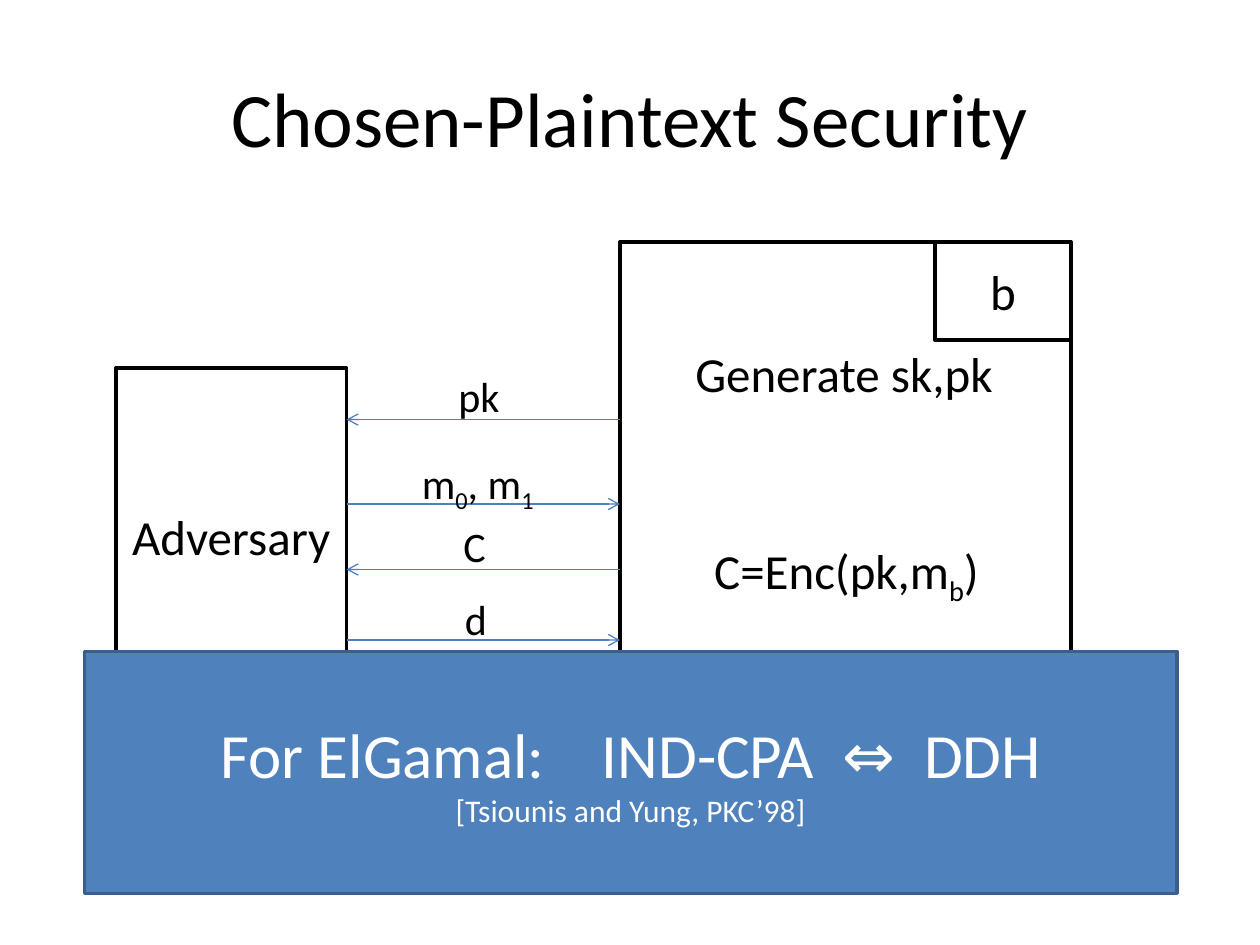
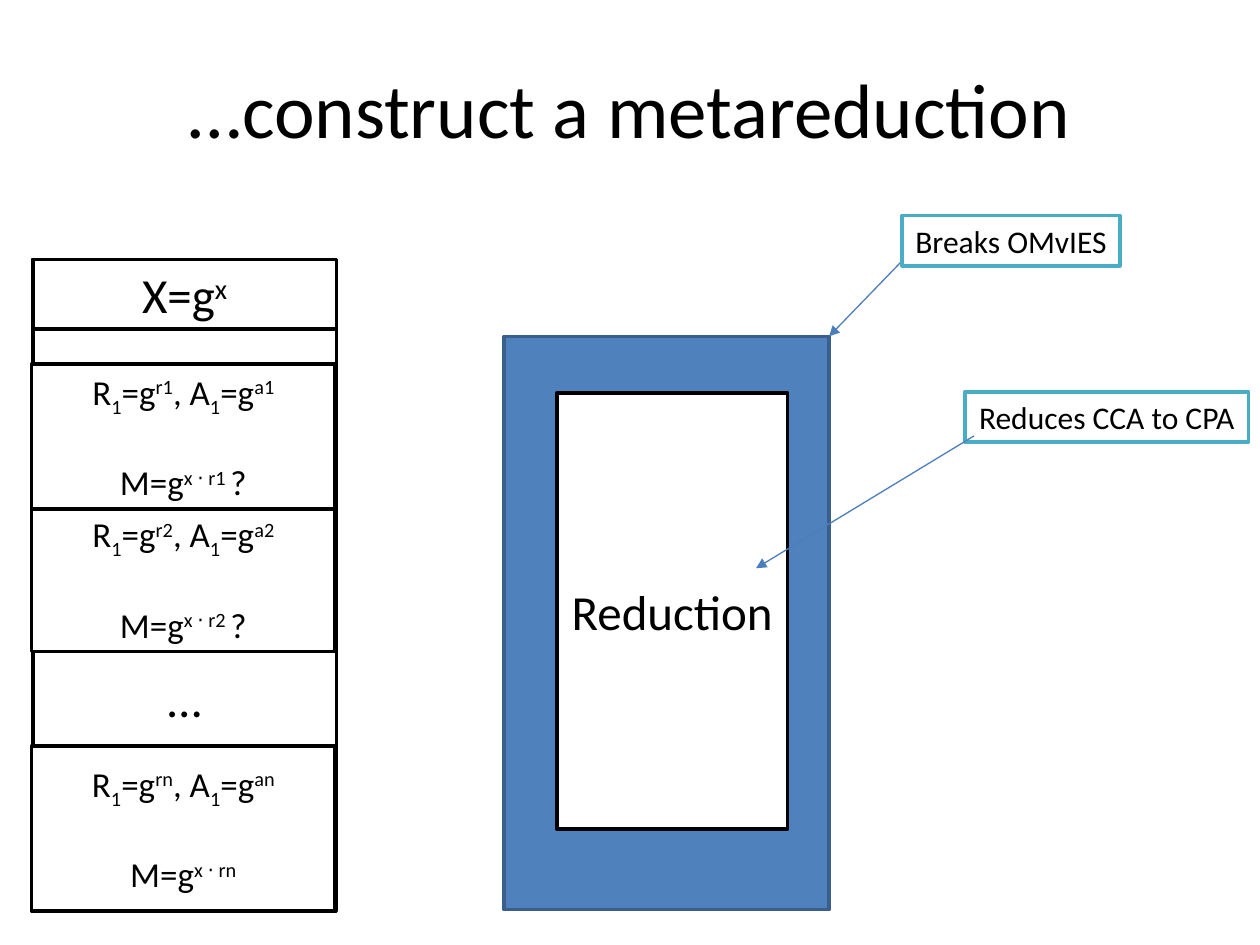
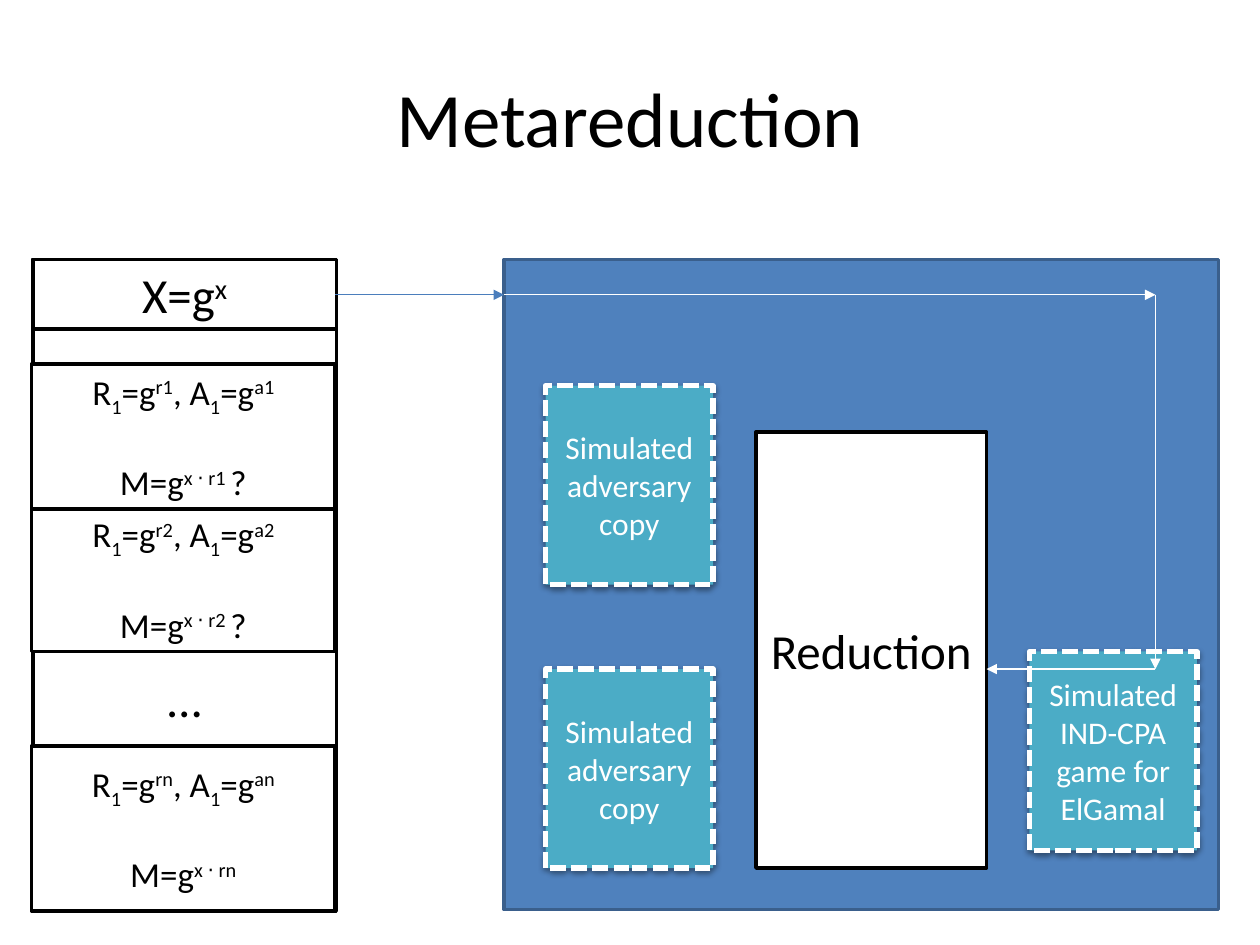
from lxml import etree
from pptx import Presentation
from pptx.dml.color import RGBColor
from pptx.enum.dml import MSO_LINE
from pptx.enum.shapes import MSO_CONNECTOR, MSO_SHAPE
from pptx.enum.text import MSO_ANCHOR, PP_ALIGN
from pptx.oxml.ns import qn
from pptx.util import Inches, Pt

RECT = MSO_SHAPE.RECTANGLE
STRAIGHT = MSO_CONNECTOR.STRAIGHT
DASH = MSO_LINE.SQUARE_DOT
LEFT, CENTER = PP_ALIGN.LEFT, PP_ALIGN.CENTER
TOP, MIDDLE = MSO_ANCHOR.TOP, MSO_ANCHOR.MIDDLE

FONT = "Calibri"
TITLE_ONLY = 5
SPACE_WIDTH = 0.226  # width of a space, in ems
COLORS = {
    "black": "000000",
    "white": "FFFFFF",
    "blue": "4F81BD",
    "edge": "3A5F8C",
    "arrow": "4B7EBC",
    "teal": "4BACC6",
}
BASELINES = {"_": "-25000", "^": "30000"}


def rgb(name):
    return RGBColor.from_string(COLORS[name])


def add_run(p, piece, size, color):
    """Add a piece: _ lowers it, ^ raises it, +n is a space widened by n spaces."""
    mark = piece[0]
    r = p.add_run()
    r.font.name, r.font.size = FONT, Pt(size)
    r.font.color.rgb = rgb(color)
    rpr = r.font._element
    if mark == "+":
        r.text = " "
        rpr.set("spc", str(round(int(piece[1:]) * SPACE_WIDTH * size * 100)))
    elif mark in BASELINES:
        r.text = piece[1:]
        rpr.set("baseline", BASELINES[mark])
    else:
        r.text = piece


def write(tf, *lines, size=28, color="black", align=CENTER, anchor=MIDDLE,
          wrap=True, gap=0, last_size=None):
    """Write one paragraph per line; | separates the pieces of a line."""
    tf.word_wrap = wrap
    tf.vertical_anchor = anchor
    for i, line in enumerate(lines):
        p = tf.add_paragraph() if i else tf.paragraphs[0]
        p.alignment = align
        if i:
            p.space_before = Pt(gap)
        line_size = last_size if i and last_size else size
        for piece in line.split("|"):
            add_run(p, piece, line_size, color)


def add_slide(prs, title, top=0.3):
    s = prs.slides.add_slide(prs.slide_layouts[TITLE_ONLY])
    sp = s.shapes.title
    sp.left, sp.top = Inches(0.5), Inches(top)
    sp.width, sp.height = Inches(9), Inches(1.25)
    write(sp.text_frame, title, size=44)
    return s


def add_box(s, x, y, w, h, *lines, fill="white", line="black", width=2, **fmt):
    sp = s.shapes.add_shape(RECT, Inches(x), Inches(y), Inches(w), Inches(h))
    sp.shadow.inherit = False
    sp.fill.solid()
    sp.fill.fore_color.rgb = rgb(fill)
    sp.line.color.rgb = rgb(line)
    sp.line.width = Pt(width)
    if lines:
        write(sp.text_frame, *lines, **fmt)
    return sp


def add_panel(s, x, y, w, h, *lines, **fmt):
    return add_box(s, x, y, w, h, *lines, fill="blue", line="edge",
                   color="white", **fmt)


def add_label(s, x, y, w, h, text, size=24):
    sp = s.shapes.add_textbox(Inches(x), Inches(y), Inches(w), Inches(h))
    write(sp.text_frame, text, size=size, align=LEFT, anchor=TOP)


def add_callout(s, x, y, w, text):
    add_box(s, x, y, w, 0.4, text, line="teal", size=18, wrap=False)


def add_arrow(s, x1, y1, x2, y2, color="arrow", head="triangle"):
    c = s.shapes.add_connector(STRAIGHT, Inches(x1), Inches(y1),
                               Inches(x2), Inches(y2))
    c.line.color.rgb = rgb(color)
    c.line.width = Pt(0.75)
    sp_pr = c._element.spPr
    etree.SubElement(sp_pr.find(qn("a:ln")), qn("a:tailEnd"), type=head)
    etree.SubElement(sp_pr, qn("a:effectLst"))


def add_simulation(s, x, y, text):
    """Add a dashed teal box with a soft shadow below it."""
    sp = add_box(s, x, y, 1.33, 1.58, text, fill="teal", line="white",
                 width=3, size=18, color="white")
    sp.line.dash_style = DASH
    effects = sp._element.spPr.find(qn("a:effectLst"))
    shadow = etree.SubElement(effects, qn("a:outerShdw"), blurRad="40000",
                              dist="20000", dir="5400000", rotWithShape="0")
    tint = etree.SubElement(shadow, qn("a:srgbClr"), val=COLORS["black"])
    etree.SubElement(tint, qn("a:alpha"), val="38000")


def add_reduction(s, x, y):
    add_box(s, x, y, 1.83, 3.46, "Reduction")


def add_challenge_column(s):
    x, w = 0.25, 2.41
    add_box(s, x + 0.01, 2.06, w, 5.17)
    add_box(s, x + 0.01, 5.16, w, 0.76, "…")
    add_box(s, x + 0.01, 2.06, w, 0.55, "X=g|^x")
    for index, y, h, ending in (("n", 5.92, 1.31, ""),
                                ("2", 4.02, 1.15, " |?"),
                                ("1", 2.89, 1.15, " |?")):
        add_box(s, x, y, w, h,
                f"R|_1|=g|^r{index}|, A|_1|=g|^a{index}",
                f"M=g|^x ⋅ r{index}{ending}", size=20, gap=24.4)


def build_security_game(prs):
    s = add_slide(prs, "Chosen-Plaintext Security")
    adversary_edge, game_edge = 2.75, 4.92
    add_box(s, game_edge, 1.92, 3.58, 4.67)
    add_box(s, 0.92, 2.92, 1.83, 2.67, "Adversary")
    for y, to_game in ((3.33, False), (4, True), (4.52, False), (5.08, True)):
        ends = (adversary_edge, game_edge)
        start, end = ends if to_game else ends[::-1]
        add_arrow(s, start, y, end, y, head="arrow")
    for x, y, w, message in ((3.54, 2.89, 0.65, "pk"),
                             (3.25, 3.58, 1.5, "m|_0|, m|_1"),
                             (3.58, 4.08, 0.65, "C"),
                             (3.59, 4.66, 0.65, "d")):
        add_label(s, x, y, w, 0.5, message)
    add_label(s, 5.57, 4.24, 2.38, 0.57, "C=Enc(pk,m|_b|)", size=28)
    add_label(s, 5.42, 2.68, 2.71, 0.57, "Generate sk,pk", size=28)
    add_box(s, 7.42, 1.92, 1.08, 0.78, "b")
    add_panel(s, 0.67, 5.17, 8.67, 1.92,
              "For ElGamal:|+3|IND-CPA|+1|⇔|+1|DDH",
              "[Tsiounis and Yung, PKC’98]", size=36, last_size=18)


def build_construction(prs):
    s = add_slide(prs, "…construct a metareduction", top=0.23)
    add_panel(s, 4, 2.67, 2.58, 4.55)
    add_reduction(s, 4.42, 3.12)
    add_challenge_column(s)
    add_arrow(s, 7.17, 2.06, 6.58, 2.67)
    add_callout(s, 7.16, 1.71, 1.73, "Breaks OMvIES")
    add_callout(s, 7.66, 3.11, 2.25, "Reduces CCA to CPA")
    add_arrow(s, 7.73, 3.46, 6, 4.51)


def build_metareduction(prs):
    s = add_slide(prs, "Metareduction")
    add_panel(s, 4, 2.06, 5.67, 5.16)
    add_challenge_column(s)
    add_reduction(s, 6, 3.43)
    for y in (3.06, 5.31):
        add_simulation(s, 4.33, y, "Simulated adversary copy")
    add_simulation(s, 8.17, 5.17, "Simulated IND-CPA game for ElGamal")
    add_arrow(s, 2.66, 2.34, 4, 2.34)
    route = [(4, 2.34), (9.17, 2.34), (9.17, 5.31), (7.83, 5.31)]
    for start, end in zip(route, route[1:]):
        add_arrow(s, *start, *end, color="white")


def main():
    prs = Presentation()
    prs.slide_width, prs.slide_height = Inches(10), Inches(7.5)
    build_security_game(prs)
    build_construction(prs)
    build_metareduction(prs)
    prs.save("out.pptx")


if __name__ == "__main__":
    main()
